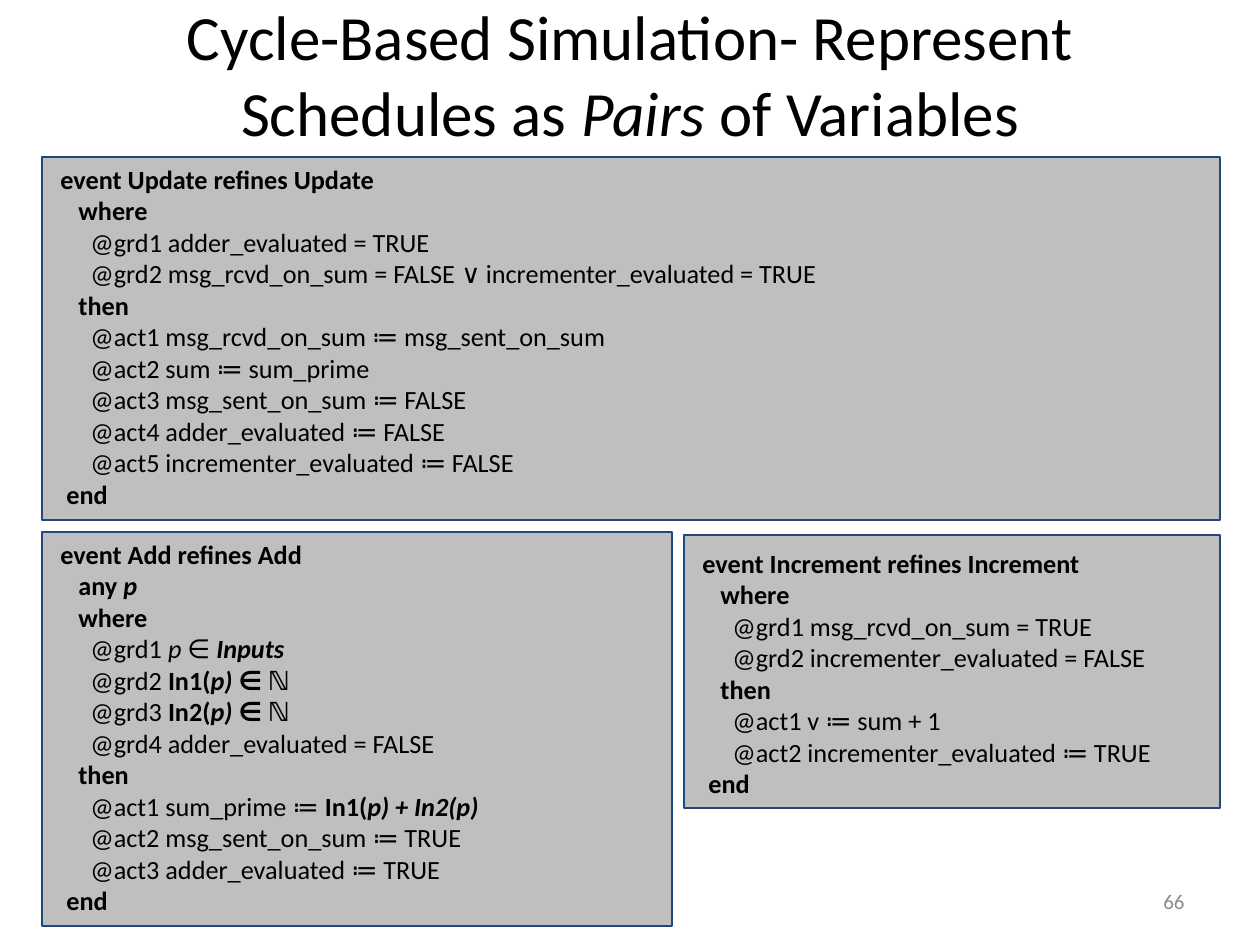
from pptx import Presentation
from pptx.dml.color import RGBColor
from pptx.enum.shapes import MSO_SHAPE
from pptx.enum.text import MSO_ANCHOR, MSO_AUTO_SIZE, PP_ALIGN
from pptx.util import Emu, Pt

SCALE = 914400 / 126  # EMU per px
STYLES = {
    "plain": {"bold": False, "italic": False},
    "bold": {"bold": True, "italic": False},
    "italic": {"bold": False, "italic": True},
    "both": {"bold": True, "italic": True},
}
# Left indents of the code lines, in px
HEAD, END, KEYWORD, BODY = 6, 12, 24, 36


def px(length):
    return Emu(round(length * SCALE))


def color(hex_code):
    return RGBColor.from_string(hex_code)


deck = Presentation()
deck.slide_width, deck.slide_height = px(1260), px(945)
page = deck.slides.add_slide(deck.slide_layouts[6])

# Title and page number
labels = [
    ((63, 10, 1134, 127), PP_ALIGN.CENTER, 36, "000000",
     [("Cycle-Based Simulation- Represent Schedules as ", "plain"),
      ("Pairs", "italic"), (" of Variables", "plain")]),
    ((903, 876, 294, 50), PP_ALIGN.RIGHT, 12, "8C8C8C", [("66", "plain")]),
]
for place, alignment, size, ink, spans in labels:
    box = page.shapes.add_textbox(*map(px, place))
    frame = box.text_frame
    frame.word_wrap = True
    frame.vertical_anchor = MSO_ANCHOR.MIDDLE
    para = frame.paragraphs[0]
    para.alignment = alignment
    for text, style in spans:
        span = para.add_run()
        span.text = text
        span.font.color.rgb = color(ink)
        for name, value in {"name": "Calibri", "size": Pt(size), **STYLES[style]}.items():
            setattr(span.font, name, value)

# Event code: place, top inset, lines of (indent, spans)
where = (KEYWORD, [("where", "bold")])
then = (KEYWORD, [("then", "bold")])
end = (END, [("end", "bold")])
events = [
    ((42, 157, 1178, 363), 6, [
        (HEAD, [("event Update refines Update", "bold")]),
        where,
        (BODY, [("@grd1 adder_evaluated = TRUE", "plain")]),
        (BODY, [("@grd2 msg_rcvd_on_sum = FALSE ∨ incrementer_evaluated = TRUE", "plain")]),
        then,
        (BODY, [("@act1 msg_rcvd_on_sum ≔ msg_sent_on_sum", "plain")]),
        (BODY, [("@act2 sum ≔ sum_prime", "plain")]),
        (BODY, [("@act3 msg_sent_on_sum ≔ FALSE", "plain")]),
        (BODY, [("@act4 adder_evaluated ≔ FALSE", "plain")]),
        (BODY, [("@act5 incrementer_evaluated ≔ FALSE", "plain")]),
        end,
    ]),
    ((42, 532, 630, 394), 6, [
        (HEAD, [("event Add refines Add", "bold")]),
        (KEYWORD, [("any ", "bold"), ("p", "both")]),
        where,
        (BODY, [("@grd1 ", "plain"), ("p ∈ ", "italic"), ("Inputs", "both")]),
        (BODY, [("@grd2 ", "plain"), ("In1(", "bold"), ("p) ∈ ℕ", "both")]),
        (BODY, [("@grd3 ", "plain"), ("In2(", "bold"), ("p) ∈ ℕ", "both")]),
        (BODY, [("@grd4 adder_evaluated = FALSE", "plain")]),
        then,
        (BODY, [("@act1 sum_prime ≔ ", "plain"), ("In1(", "bold"),
                ("p) + In2(p)", "both")]),
        (BODY, [("@act2 msg_sent_on_sum ≔ TRUE", "plain")]),
        (BODY, [("@act3 adder_evaluated ≔ TRUE", "plain")]),
        end,
    ]),
    ((684, 535, 536, 273), 12, [
        (HEAD, [("event Increment refines Increment", "bold")]),
        where,
        (BODY, [("@grd1 msg_rcvd_on_sum = TRUE", "plain")]),
        (BODY, [("@grd2 incrementer_evaluated = FALSE", "plain")]),
        then,
        (BODY, [("@act1 v ≔ sum + 1", "plain")]),
        (BODY, [("@act2 incrementer_evaluated ≔ TRUE", "plain")]),
        end,
    ]),
]
for place, inset, lines in events:
    box = page.shapes.add_shape(MSO_SHAPE.RECTANGLE, *map(px, place))
    box.shadow.inherit = False
    box.fill.solid()
    box.fill.fore_color.rgb = color("BFBFBF")
    box.line.color.rgb = color("1F497D")
    box.line.width = Pt(0.75)
    frame = box.text_frame
    layout = {"word_wrap": True, "auto_size": MSO_AUTO_SIZE.SHAPE_TO_FIT_TEXT,
              "vertical_anchor": MSO_ANCHOR.TOP, "margin_top": px(inset)}
    for name, value in layout.items():
        setattr(frame, name, value)
    for number, (indent, spans) in enumerate(lines):
        para = frame.add_paragraph() if number else frame.paragraphs[0]
        para.alignment = PP_ALIGN.LEFT
        para._p.get_or_add_pPr().set("marL", str(px(indent)))
        for text, style in spans:
            span = para.add_run()
            span.text = text
            span.font.color.rgb = color("000000")
            for name, value in {"name": "Calibri", "size": Pt(15), **STYLES[style]}.items():
                setattr(span.font, name, value)

deck.save("out.pptx")
